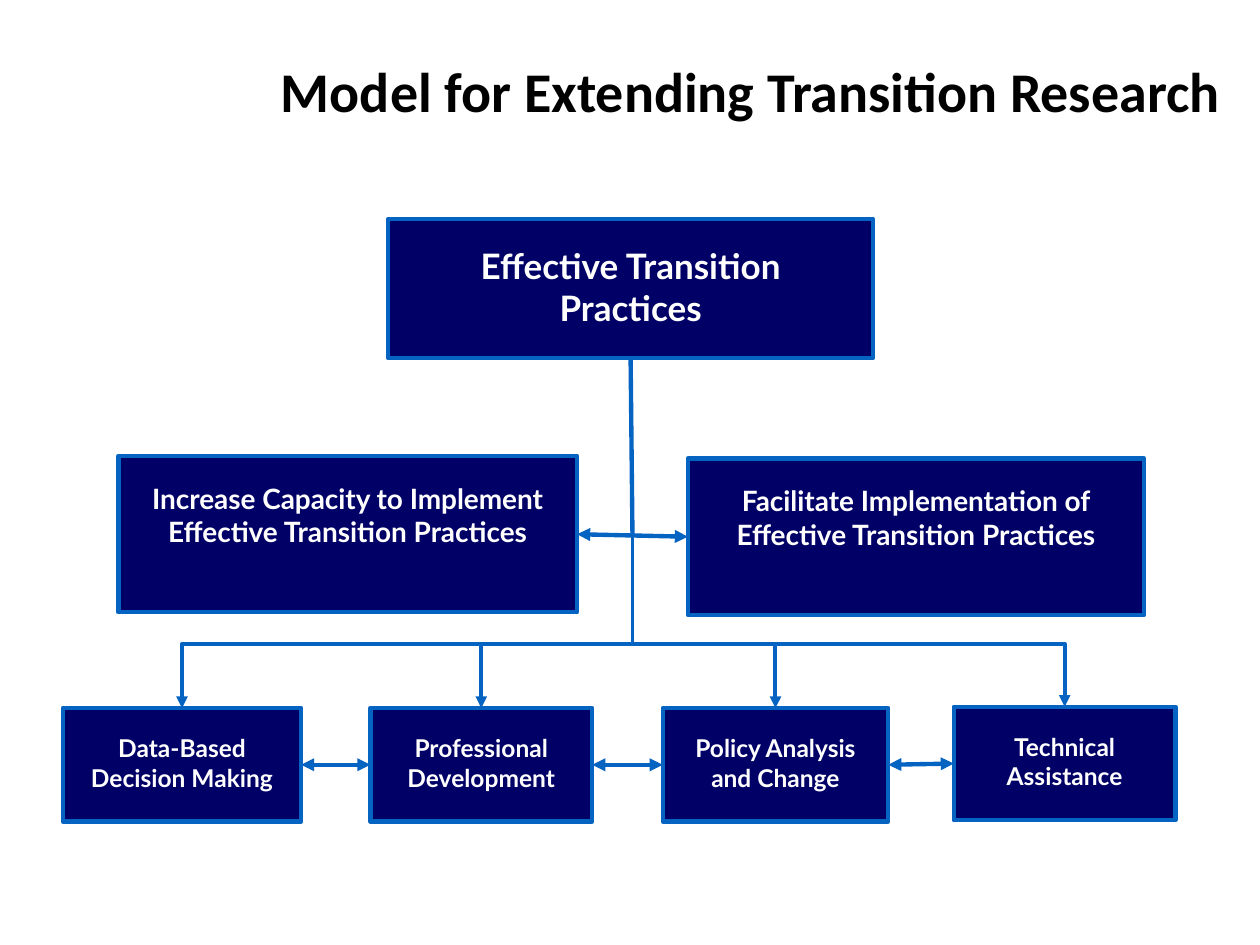
from dataclasses import dataclass
from itertools import pairwise

from pptx import Presentation
from pptx.dml.color import RGBColor
from pptx.enum.shapes import MSO_CONNECTOR, MSO_SHAPE
from pptx.enum.text import MSO_ANCHOR, PP_ALIGN
from pptx.oxml.ns import qn
from pptx.shapes.autoshape import Shape
from pptx.shapes.connector import Connector
from pptx.slide import Slide
from pptx.util import Inches, Pt
from lxml.etree import SubElement

NAVY, BLUE, WHITE, BLACK = "000066", "0563C1", "FFFFFF", "000000"
BOTTOM, LEFT, RIGHT = 2, 1, 3  # connection sites of a rectangle
TRUNK_X, JOINT_Y, BRANCH_Y = 5.01, 4.25, 5.11


@dataclass
class Box:
    text: str
    left: float
    top: float
    width: float
    height: float
    size: int
    side_inset: float = 0.2


def color(value: str) -> RGBColor:
    return RGBColor.from_string(value)


def draw_box(page: Slide, box: Box) -> Shape:
    shape = page.shapes.add_shape(
        MSO_SHAPE.RECTANGLE, Inches(box.left), Inches(box.top), Inches(box.width), Inches(box.height))
    shape.shadow.inherit = False
    shape.fill.solid()
    shape.fill.fore_color.rgb = color(NAVY)
    shape.line.color.rgb = color(BLUE)
    shape.line.width = Pt(2.5)
    frame = shape.text_frame
    frame.word_wrap = True
    frame.vertical_anchor = MSO_ANCHOR.TOP
    frame.margin_left = frame.margin_right = Inches(box.side_inset)
    frame.margin_top = frame.margin_bottom = Inches(0.2)
    para = frame.paragraphs[0]
    para.text = box.text
    para.alignment = PP_ALIGN.CENTER
    style_font(para.font, "Lato", box.size, WHITE)
    return shape


def style_font(font, name: str, size: int, value: str) -> None:
    font.name, font.size, font.bold = name, Pt(size), True
    font.color.rgb = color(value)


def draw_line(page: Slide, start: tuple[float, float], end: tuple[float, float], width: float = 2.5,
              heads: tuple[str, ...] = (), kind: MSO_CONNECTOR = MSO_CONNECTOR.STRAIGHT) -> Connector:
    line = page.shapes.add_connector(kind, *(Inches(value) for value in (*start, *end)))
    line.line.color.rgb = color(BLUE)
    line.line.width = Pt(width)
    for head in heads:
        SubElement(line.line._get_or_add_ln(), qn(f"a:{head}"), type="triangle")
    SubElement(line._element.spPr, qn("a:effectLst"))
    return line


def link(page: Slide, left: Shape, right: Shape) -> None:
    """Join two neighbours with a double-headed arrow."""
    arrow = draw_line(page, (0, 0), (1, 1), heads=("headEnd", "tailEnd"))
    arrow.begin_connect(left, RIGHT)
    arrow.end_connect(right, LEFT)


def draw_branch(page: Slide, box: Box) -> None:
    """Run along the branch line, then down to the box."""
    end = (box.left + box.width / 2, box.top)
    branch = draw_line(page, (TRUNK_X, BRANCH_Y), end, 2.25, ("tailEnd",), MSO_CONNECTOR.ELBOW)
    branch._element.spPr.find(qn("a:prstGeom")).set("prst", "bentConnector2")


GOAL = Box("Effective Transition Practices", 3.08, 1.74, 3.85, 1.1, 20)
AIMS = [
    Box("Increase Capacity to Implement Effective Transition Practices", 0.94, 3.62, 3.64, 1.24, 16),
    Box("Facilitate Implementation of Effective Transition Practices", 5.46, 3.64, 3.62, 1.24, 16),
]
STRATEGIES = [
    Box("Data-Based Decision Making", 0.5, 5.62, 1.89, 0.9, 14, 0.1),
    Box("Professional Development", 2.94, 5.62, 1.76, 0.9, 14, 0.1),
    Box("Policy Analysis and Change", 5.26, 5.62, 1.79, 0.9, 14, 0.1),
    Box("Technical Assistance", 7.57, 5.61, 1.76, 0.9, 14, 0.1),
]


def main() -> None:
    deck = Presentation()
    deck.slide_width, deck.slide_height = Inches(10), Inches(7.5)
    page = deck.slides.add_slide(deck.slide_layouts[5])

    # Title
    title = page.shapes.title
    title.left, title.top, title.width, title.height = (Inches(value) for value in (1.92, 0.25, 8.08, 1))
    title.text_frame.text = "Model for Extending Transition Research"
    title.text_frame.vertical_anchor = MSO_ANCHOR.MIDDLE
    para = title.text_frame.paragraphs[0]
    para.alignment = PP_ALIGN.CENTER
    para.line_spacing = 0.9
    style_font(para.font, "Calibri", 32, BLACK)

    # Goal and trunk
    goal = draw_box(page, GOAL)
    trunk = draw_line(page, (TRUNK_X, GOAL.top + GOAL.height), (TRUNK_X + 0.01, JOINT_Y))
    trunk.begin_connect(goal, BOTTOM)
    draw_line(page, (TRUNK_X + 0.01, JOINT_Y), (TRUNK_X + 0.01, BRANCH_Y), 2.25)

    # Branches down to the strategies
    for strategy in STRATEGIES:
        draw_branch(page, strategy)

    # Rows of linked boxes
    for row in (AIMS, STRATEGIES):
        shapes = [draw_box(page, box) for box in row]
        for left, right in pairwise(shapes):
            link(page, left, right)

    deck.save("out.pptx")


if __name__ == "__main__":
    main()
